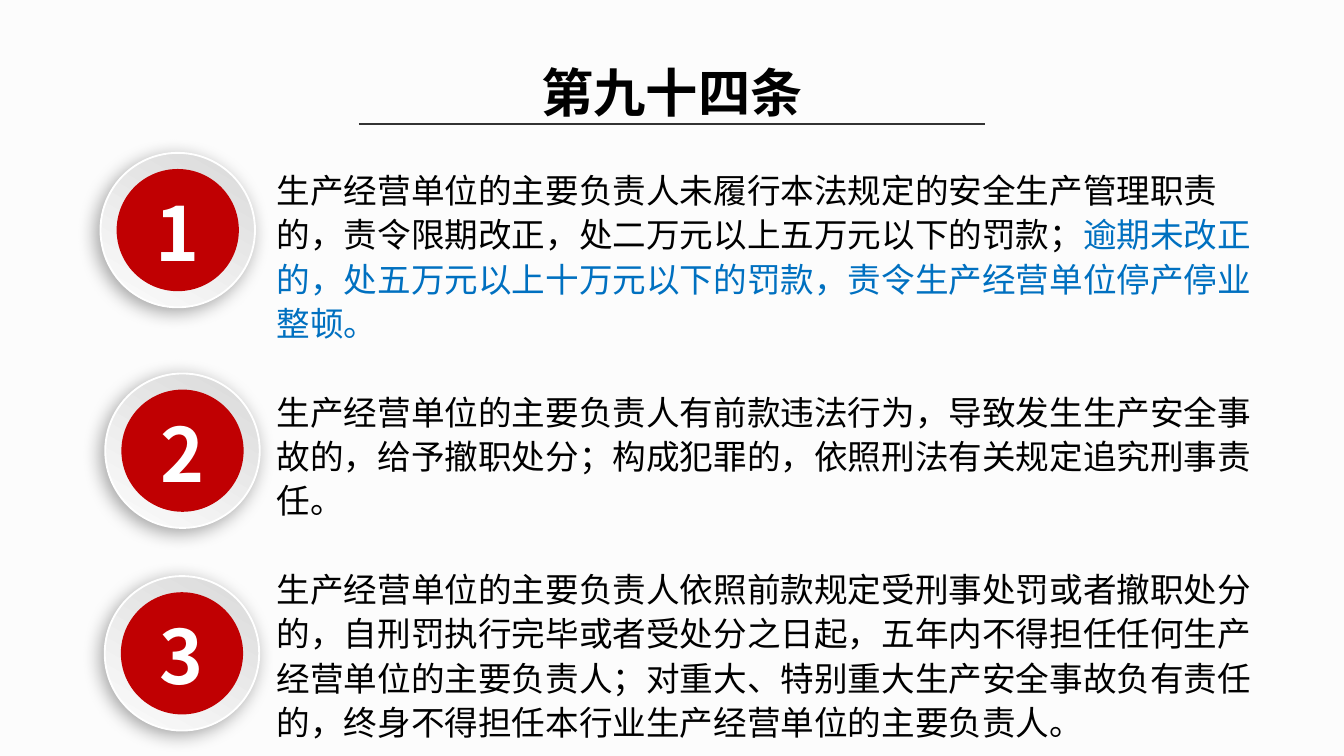
import lxml.etree
import pptx
import pptx.dml.color
import pptx.enum.shapes
import pptx.enum.text
import pptx.oxml
import pptx.oxml.ns
import pptx.util
from dataclasses import dataclass
from pptx.util import Cm


@dataclass(frozen=True)
class Theme:
    background: str = "FCFCFC"
    ink: str = "000000"
    highlight: str = "0070C0"
    rule: str = "333333"
    disc: str = "C00002"
    ring_dark: str = "D9D9D9"
    ring_light: str = "FCFCFC"
    white: str = "FFFFFF"
    title_size: float = 28
    number_size: float = 40
    body_size: float = 18
    body_pitch: float = 23.76


def rgb(value):
    return pptx.dml.color.RGBColor.from_string(value)


def style(run, font_name, size, color, bold=False):
    run.font.name = font_name
    run.font.size = pptx.util.Pt(size)
    run.font.color.rgb = rgb(color)
    run.font.bold = bold


theme = Theme()
deck = pptx.Presentation()
deck.slide_width = Cm(25.4)
deck.slide_height = Cm(14.29)
slide = deck.slides.add_slide(deck.slide_layouts[5])
slide.background.fill.solid()
slide.background.fill.fore_color.rgb = rgb(theme.background)

title = slide.shapes.title
title.left, title.top, title.width, title.height = Cm(8), Cm(1), Cm(9.4), Cm(1.45)
title.text_frame.text = "第九十四条"
title.text_frame.vertical_anchor = pptx.enum.text.MSO_ANCHOR.MIDDLE
title.text_frame.paragraphs[0].alignment = pptx.enum.text.PP_ALIGN.CENTER
style(title.text_frame.paragraphs[0].runs[0], "Arial", theme.title_size, theme.ink, True)

title_rule = slide.shapes.add_connector(
    pptx.enum.shapes.MSO_CONNECTOR.STRAIGHT, Cm(6.78), Cm(2.35), Cm(18.62), Cm(2.35))
title_rule.line.color.rgb = rgb(theme.rule)
title_rule.line.width = pptx.util.Pt(1)
lxml.etree.SubElement(title_rule._element.spPr, pptx.oxml.ns.qn("a:effectLst"))

ring_shadow = (
    '<a:outerShdw xmlns:a="http://schemas.openxmlformats.org/drawingml/2006/main" '
    'blurRad="127000" dist="38100" dir="8160000" algn="ctr" rotWithShape="0">'
    '<a:srgbClr val="000000"><a:alpha val="34000"/></a:srgbClr></a:outerShdw>')
ring_size, disc_size = 2.92, 2.31
inset = (ring_size - disc_size) / 2
oval = pptx.enum.shapes.MSO_SHAPE.OVAL

for number, (left, top) in enumerate([(1.9, 2.89), (1.99, 7.06), (1.98, 10.89)], 1):
    badge = slide.shapes.add_group_shape()

    ring = badge.shapes.add_shape(oval, Cm(left), Cm(top), Cm(ring_size), Cm(ring_size))
    ring.fill.gradient()
    ring.fill.gradient_angle = 240
    for stop, color in zip(ring.fill.gradient_stops, (theme.ring_dark, theme.ring_light)):
        stop.color.rgb = rgb(color)
    ring.line.color.rgb = rgb(theme.white)
    ring.line.width = pptx.util.Pt(1)
    ring.shadow.inherit = False
    effects = ring._element.spPr.find(pptx.oxml.ns.qn("a:effectLst"))
    effects.append(pptx.oxml.parse_xml(ring_shadow))

    disc = badge.shapes.add_shape(
        oval, Cm(left + inset), Cm(top + inset), Cm(disc_size), Cm(disc_size))
    disc.fill.solid()
    disc.fill.fore_color.rgb = rgb(theme.disc)
    disc.line.fill.background()
    disc.shadow.inherit = False
    label = disc.text_frame
    label.margin_left = label.margin_right = label.margin_bottom = 0
    label.margin_top = Cm(0.06)
    label.word_wrap = False
    label.vertical_anchor = pptx.enum.text.MSO_ANCHOR.MIDDLE
    label.text = str(number)
    label.paragraphs[0].alignment = pptx.enum.text.PP_ALIGN.CENTER
    style(label.paragraphs[0].runs[0], "Noto Sans CJK SC", theme.number_size, theme.white, True)

clauses = [
    [("生产经营单位的主要负责人未履行本法规定的安全生产管理职责的，责令限期改正，"
      "处二万元以上五万元以下的罚款；", theme.ink),
     ("逾期未改正的，处五万元以上十万元以下的罚款，责令生产经营单位停产停业整顿。",
      theme.highlight)],
    [("生产经营单位的主要负责人有前款违法行为，导致发生生产安全事故的，给予撤职处分；"
      "构成犯罪的，依照刑法有关规定追究刑事责任。", theme.ink)],
    [("生产经营单位的主要负责人依照前款规定受刑事处罚或者撤职处分的，"
      "自刑罚执行完毕或者受处分之日起，五年内不得担任任何生产经营单位的主要负责人；"
      "对重大、特别重大生产安全事故负有责任的，终身不得担任本行业生产经营单位的主要负责人。",
      theme.ink)],
]
article = slide.shapes.add_textbox(Cm(4.98), Cm(3.01), Cm(19.35), Cm(11.23)).text_frame
article.word_wrap = True
for index, clause in enumerate(clauses):
    paragraph = article.add_paragraph() if index else article.paragraphs[0]
    paragraph.line_spacing = pptx.util.Pt(theme.body_pitch)
    paragraph.space_before = pptx.util.Pt(theme.body_pitch if index else 0)
    paragraph._p.get_or_add_pPr().set("hangingPunct", "0")
    for wording, color in clause:
        run = paragraph.add_run()
        run.text = wording
        style(run, "Calibri", theme.body_size, color)

deck.save("out.pptx")
